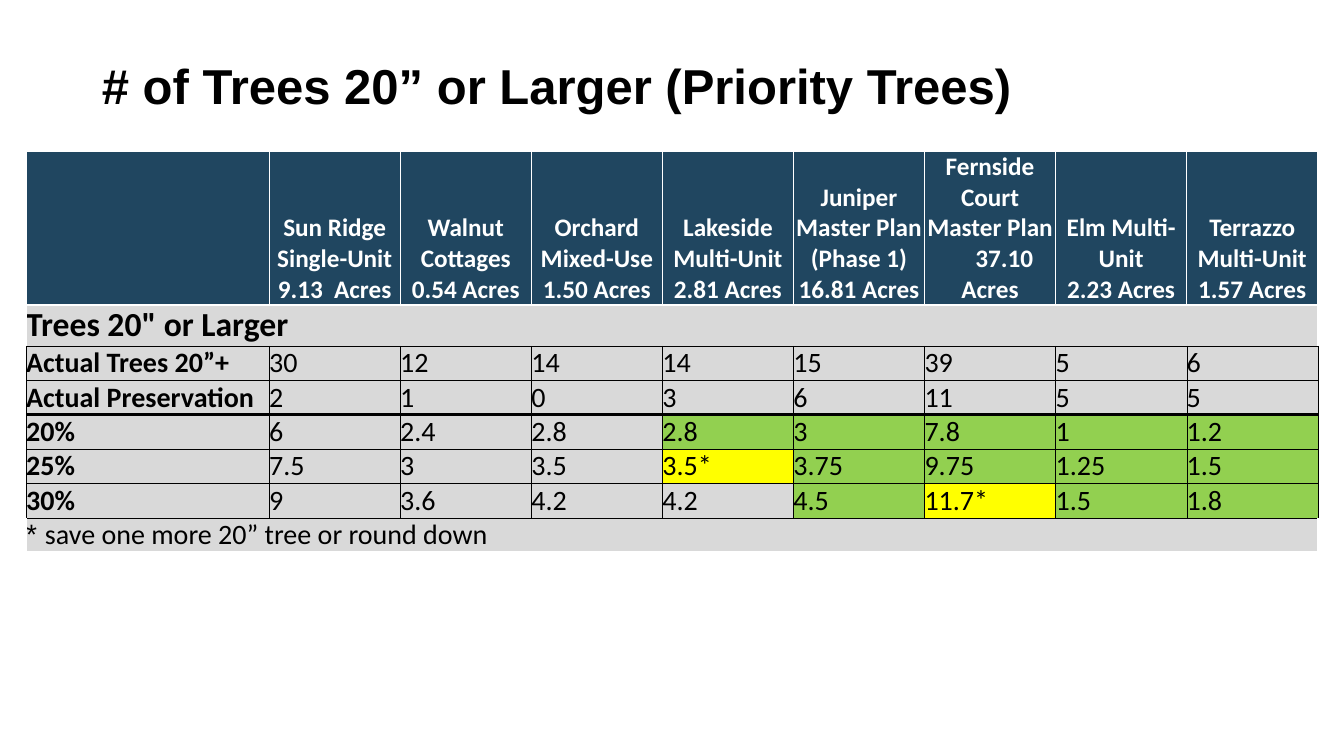
from lxml.etree import SubElement
from pptx import Presentation
from pptx.dml.color import RGBColor
from pptx.enum.text import MSO_ANCHOR as Anchor, MSO_AUTO_SIZE as AutoSize, PP_ALIGN as Align
from pptx.oxml.ns import qn
from pptx.util import Inches, Pt

TITLE = "# of Trees 20” or Larger (Priority Trees)"
PROJECTS = [
    ["Sun Ridge Single-Unit 9.13  Acres"],
    ["Walnut", "Cottages 0.54 Acres"],
    ["Orchard Mixed-Use 1.50 Acres"],
    ["Lakeside Multi-Unit 2.81 Acres"],
    ["Juniper Master Plan", "(Phase 1) 16.81 Acres"],
    ["Fernside Court Master Plan", "37.10", "Acres"],
    ["Elm Multi-Unit", "2.23 Acres"],
    ["Terrazzo Multi-Unit 1.57 Acres"],
]
SECTION = 'Trees 20" or Larger'
ACTUAL = [
    ("Actual Trees 20”+", ["30", "12", "14", "14", "15", "39", "5", "6"]),
    ("Actual Preservation", ["2", "1", "0", "3", "6", "11", "5", "5"]),
]
TARGETS = [
    ("20%", ["6", "2.4", "2.8", "2.8", "3", "7.8", "1", "1.2"]),
    ("25%", ["7.5", "3", "3.5", "3.5*", "3.75", "9.75", "1.25", "1.5"]),
    ("30%", ["9", "3.6", "4.2", "4.2", "4.5", "11.7*", "1.5", "1.8"]),
]
FOOTNOTE = ("* ", "save one more 20” tree or round down")
INDENTED = "37.10"

COLORS = {"header": "204660", "plain": "D9D9D9", "met": "92D050", "near": "FFFF00",
          "white": "FFFFFF", "black": "000000"}
COLUMNS = [2.41] + [1.3] * len(PROJECTS)
ROWS = [1.27, 0.18, 0.18, 0.21, 0.18, 0.18, 0.18, 0.21]
THIN, THICK = ("black", 0.25), ("black", 2.25)
WHITE = ("white", 1)


def color(name):
    return RGBColor.from_string(COLORS[name])


def set_borders(cell, left, right, top, bottom):
    properties = cell._tc.get_or_add_tcPr()
    for side, (name, width) in zip("LRTB", (left, right, top, bottom)):
        line = SubElement(properties, qn(f"a:ln{side}"), w=str(Pt(width)))
        fill = SubElement(line, qn("a:solidFill"))
        SubElement(fill, qn("a:srgbClr"), val=COLORS[name])


def style_cell(cell, fill, borders):
    set_borders(cell, *borders)
    cell.fill.solid()
    cell.fill.fore_color.rgb = color(fill)
    cell.vertical_anchor = Anchor.BOTTOM
    cell.margin_left = cell.margin_right = cell.margin_top = cell.margin_bottom = 0


def write(para, spans, size, bold=False, ink="black", align=Align.LEFT):
    para.alignment = align
    for text in spans:
        span = para.add_run()
        span.text = text
        span.font.name = "Calibri"
        span.font.size = Pt(size)
        span.font.bold = bold
        span.font.color.rgb = color(ink)


def write_header(cell, lines):
    box = cell.text_frame
    for index, line in enumerate(lines):
        para = box.add_paragraph() if index else box.paragraphs[0]
        if line == INDENTED:
            para._p.get_or_add_pPr().set("marL", str(Inches(0.28)))
        write(para, [line], 18, True, "white", Align.CENTER)


def target_fill(target, preserved):
    shortfall = float(target.rstrip("*")) - float(preserved)
    return "met" if shortfall <= 0 else "near" if shortfall < 1 else "plain"


def add_title(page):
    title = page.shapes.title
    title.left, title.top, title.width, title.height = map(Inches, (0.91, 0.54, 11.5, 0.65))
    box = title.text_frame
    box.text = TITLE
    box.word_wrap = True
    box.auto_size = AutoSize.NONE
    box.vertical_anchor = Anchor.BOTTOM
    para = box.paragraphs[0]
    para.alignment = Align.LEFT
    para.line_spacing = 0.9
    font = para.runs[0].font
    font.name, font.size, font.bold = "Arial", Pt(35), True
    font.color.rgb = color("black")


def add_tree_table(page):
    frame = page.shapes.add_table(len(ROWS), len(COLUMNS), Inches(0.26), Inches(1.5),
                                  Inches(sum(COLUMNS)), Inches(3.71))
    table = frame.table
    table.first_row = table.horz_banding = False
    for column, width in zip(table.columns, COLUMNS):
        column.width = Inches(width)
    for row, height in zip(table.rows, ROWS):
        row.height = Inches(height)
    frame.height = Inches(3.71)

    for index, lines in enumerate([[]] + PROJECTS):
        cell = table.cell(0, index)
        style_cell(cell, "header", [WHITE] * 4)
        write_header(cell, lines)

    last = len(ROWS) - 1
    for row, borders in ((1, (WHITE, WHITE, WHITE, THIN)), (last, (WHITE, WHITE, THIN, WHITE))):
        for index in range(len(COLUMNS)):
            style_cell(table.cell(row, index), "plain", borders)
        table.cell(row, 0).merge(table.cell(row, len(COLUMNS) - 1))
    write(table.cell(1, 0).text_frame.paragraphs[0], [SECTION], 24, True)
    note = table.cell(last, 0).text_frame.paragraphs[0]
    write(note, FOOTNOTE, 20)
    note.runs[0].font.name = "Arial"

    preserved = ACTUAL[-1][1]
    first_target = 2 + len(ACTUAL)
    for row, (label, values) in enumerate(ACTUAL + TARGETS, start=2):
        top = THICK if row == first_target else THIN
        bottom = THICK if row == first_target - 1 else THIN
        for index, text in enumerate([label] + values):
            judged = row >= first_target and index > 0
            fill = target_fill(text, preserved[index - 1]) if judged else "plain"
            cell = table.cell(row, index)
            style_cell(cell, fill, (THIN, THIN, top, bottom))
            write(cell.text_frame.paragraphs[0], [text], 20, index == 0)


def main():
    deck = Presentation()
    deck.slide_width, deck.slide_height = Inches(13.33), Inches(7.5)
    page = deck.slides.add_slide(deck.slide_layouts[5])
    add_tree_table(page)
    add_title(page)
    deck.save("out.pptx")


if __name__ == "__main__":
    main()
